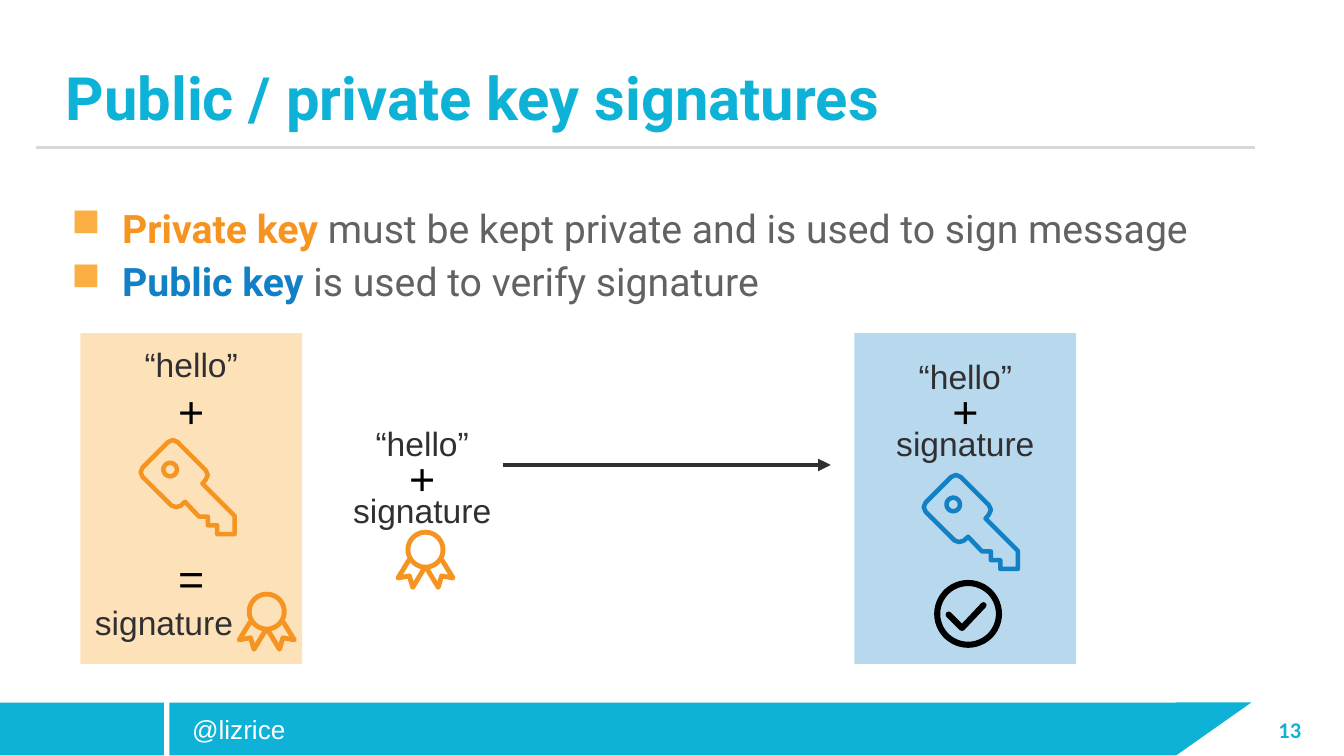
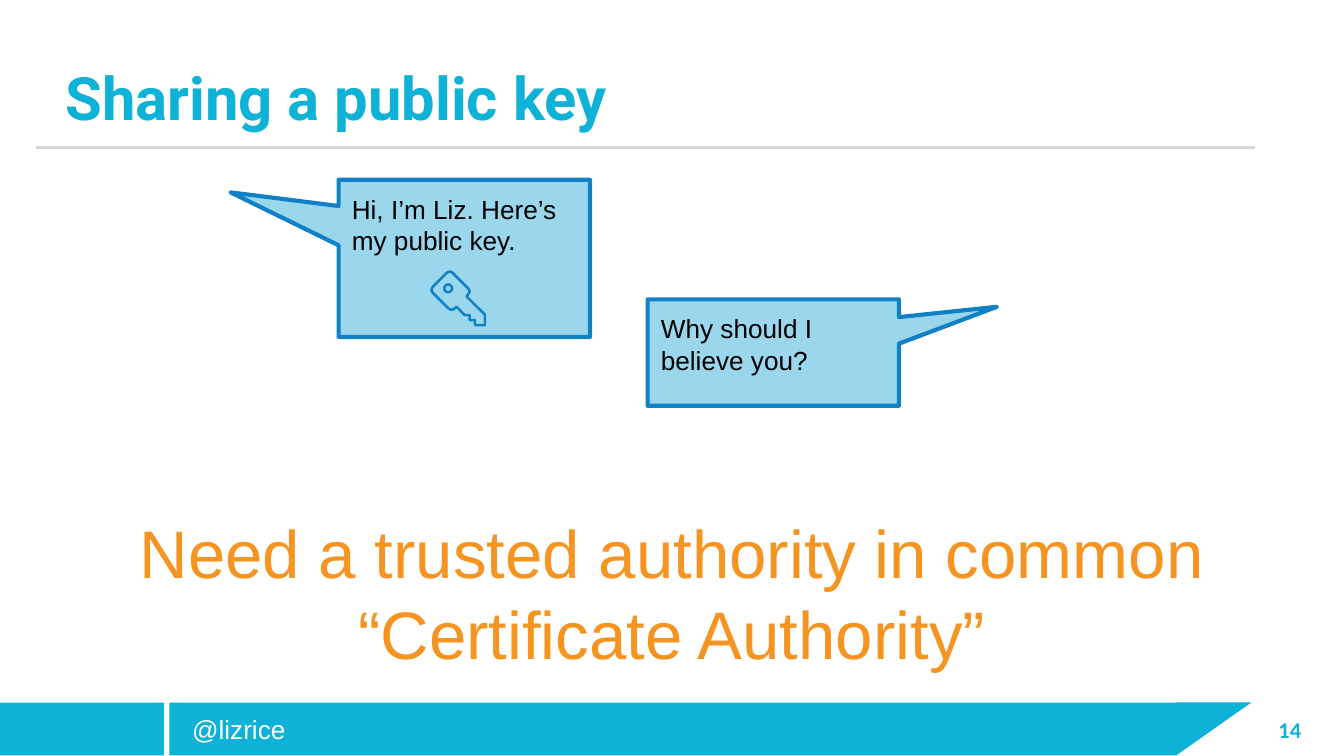
from math import cos, pi, sin

from lxml.etree import SubElement
from pptx import Presentation
from pptx.dml.color import RGBColor
from pptx.enum.shapes import MSO_CONNECTOR, MSO_SHAPE
from pptx.enum.text import MSO_ANCHOR, PP_ALIGN
from pptx.oxml.ns import qn
from pptx.util import Cm, Pt

CYAN = RGBColor(0x0E, 0xB2, 0xD6)
PALE = RGBColor(0x9A, 0xD7, 0xEC)
BLUE = RGBColor(0x11, 0x80, 0xC4)
ORANGE = RGBColor(0xF6, 0x94, 0x21)
AMBER = RGBColor(0xFB, 0xAF, 0x42)
GREY = RGBColor(0x64, 0x61, 0x64)
RULE = RGBColor(0xD8, 0xD8, 0xD8)
DARK = RGBColor(0x30, 0x2F, 0x31)
BLACK = RGBColor(0, 0, 0)
WHITE = RGBColor(0xFF, 0xFF, 0xFF)

ROW = 1
PANEL = (4.19, 6.25)
PAD = Cm(0.25)


def ring(x, y, radius, count=48):
    turns = [2 * pi * n / count for n in range(count)]
    return [(x + radius * cos(t), y + radius * sin(t)) for t in turns], True


def mirror(points, width):
    return [(width - x, y) for x, y in points]


RIBBON = [(100, 230), (20, 360), (105, 345), (130, 430), (215, 290)]
MEDAL = [ring(225, 150, 130), (RIBBON, False), (mirror(RIBBON, 450), False)]
CHECK = [ring(255, 250, 230), ([(110, 255), (210, 355), (370, 185)], False)]
KEY = [
    ([(715, 715), (585, 715), (585, 650), (515, 650), (515, 585), (450, 585),
      (345, 475), (315, 503), (280, 515), (245, 503), (30, 290), (15, 255),
      (30, 220), (220, 30), (255, 15), (290, 30), (500, 240), (515, 275),
      (500, 310), (475, 340), (715, 580)], True),
    ring(235, 235, 50),
]


def write(para, text, size, color, font="Arial", bold=False):
    run = para.add_run()
    run.text = text
    run.font.size = Pt(size)
    run.font.name = font
    run.font.bold = bold
    run.font.color.rgb = color


def set_frame(frame, anchor=MSO_ANCHOR.TOP):
    frame.word_wrap = True
    frame.vertical_anchor = anchor
    frame.margin_left = frame.margin_right = PAD
    frame.margin_top = frame.margin_bottom = PAD
    return frame


def add_box(slide, x, y, w, h, anchor=MSO_ANCHOR.TOP):
    box = slide.shapes.add_textbox(Cm(x), Cm(y), Cm(w), Cm(h))
    return set_frame(box.text_frame, anchor)


def add_label(slide, text, x, y, w, size=18, color=DARK, align=PP_ALIGN.CENTER):
    para = add_box(slide, x, y, w, ROW, MSO_ANCHOR.MIDDLE).paragraphs[0]
    para.alignment = align
    write(para, text, size, color)


def add_block(slide, kind, x, y, w, h, color, alpha=None):
    shape = slide.shapes.add_shape(kind, Cm(x), Cm(y), Cm(w), Cm(h))
    shape.shadow.inherit = False
    shape.fill.solid()
    shape.fill.fore_color.rgb = color
    shape.line.fill.background()
    if alpha:
        tint = shape._element.spPr.find(qn("a:solidFill"))[0]
        SubElement(tint, qn("a:alpha")).set("val", str(alpha * 1000))
    return shape


def add_line(slide, x, y, end, color, width, arrow=False):
    line = slide.shapes.add_connector(
        MSO_CONNECTOR.STRAIGHT, Cm(x), Cm(y), Cm(end), Cm(y))
    line.line.color.rgb = color
    line.line.width = Pt(width)
    if arrow:
        SubElement(line.line._get_or_add_ln(), qn("a:tailEnd")).set("type", "triangle")
    SubElement(line._element.spPr, qn("a:effectLst"))


def add_icon(slide, parts, x, y, color, width, zoom=1.0):
    (first, closed), *rest = parts
    pen = slide.shapes.build_freeform(*first[0], scale=Cm(2.54) * zoom / 1000)
    pen.add_line_segments(first[1:], close=closed)
    for points, closed in rest:
        pen.move_to(*points[0])
        pen.add_line_segments(points[1:], close=closed)
    icon = pen.convert_to_shape(Cm(x), Cm(y))
    icon.shadow.inherit = False
    icon.fill.background()
    icon.line.color.rgb = color
    icon.line.width = Pt(width * zoom)
    edge = icon.line._get_or_add_ln()
    edge.set("cap", "rnd")
    SubElement(edge, qn("a:round"))


def add_bullet(para, term, color, rest):
    props = para._p.get_or_add_pPr()
    props.set("marL", str(Cm(1.27)))
    props.set("indent", str(-Cm(0.96)))
    tint = SubElement(props, qn("a:buClr"))
    SubElement(tint, qn("a:srgbClr")).set("val", str(AMBER))
    SubElement(props, qn("a:buChar")).set("char", "■")
    para.line_spacing = 1.14
    write(para, term, 21, color, "Roboto", True)
    write(para, rest, 21, GREY, "Roboto")


def add_stack(slide, mid, top):
    width = 3.76
    left = mid - width / 2
    add_label(slide, "“hello”", left, top, width)
    add_label(slide, "+", left, top + 0.66, width, 24, BLACK)
    add_label(slide, "signature", left, top + 1.27, width)


def add_callout(slide, text, x, y, h, tip):
    shape = add_block(slide, MSO_SHAPE.ROUNDED_RECTANGULAR_CALLOUT,
                      x, y, 4.75, h, PALE)
    for n, value in enumerate((*tip, 0)):
        shape.adjustments[n] = value
    shape.line.color.rgb = BLUE
    shape.line.width = Pt(2.25)
    para = set_frame(shape.text_frame).paragraphs[0]
    para.alignment = PP_ALIGN.LEFT
    write(para, text, 14, BLACK)


def add_page(deck, title, number):
    slide = deck.slides.add_slide(deck.slide_layouts[5])
    base = 13.28
    add_block(slide, MSO_SHAPE.RECTANGLE, 3.2, base, 19.03, ROW, CYAN)
    add_block(slide, MSO_SHAPE.RECTANGLE, 0, base, 3.1, ROW, CYAN)
    wedge = add_block(slide, MSO_SHAPE.RIGHT_TRIANGLE, 22.23, base, 1.42, ROW, CYAN)
    wedge._element.spPr.find(qn("a:xfrm")).set("flipV", "1")
    frame = add_box(slide, 23.7, 13.41, 1.14, 0.76)
    frame.margin_top = frame.margin_bottom = Cm(0.13)
    frame.paragraphs[0].alignment = PP_ALIGN.RIGHT
    write(frame.paragraphs[0], str(number), 12, CYAN, "Calibri", True)
    add_line(slide, 0.69, 2.79, 23.72, RULE, 1.5)
    add_label(slide, "@lizrice", 3.38, base, 7.04, 14, WHITE, PP_ALIGN.LEFT)
    head = slide.shapes.title
    head.left, head.top, head.width, head.height = Cm(0.99), Cm(0.36), Cm(22.56), Cm(2.41)
    para = set_frame(head.text_frame, MSO_ANCHOR.BOTTOM).paragraphs[0]
    para.alignment = PP_ALIGN.LEFT
    para.line_spacing = 0.9
    write(para, title, 32, CYAN, "Roboto", True)
    return slide


def draw_signing(deck):
    slide = add_page(deck, "Public / private key signatures", 13)
    frame = add_box(slide, 0.79, 3.48, 24.18, 2.97)
    add_bullet(frame.paragraphs[0], "Private key", ORANGE,
               " must be kept private and is used to sign message")
    add_bullet(frame.add_paragraph(), "Public key", BLUE,
               " is used to verify signature")

    left, right, top = 1.52, 16.15, 6.3
    add_block(slide, MSO_SHAPE.RECTANGLE, left, top, *PANEL, AMBER, 37)
    add_label(slide, "“hello”", left, 6.38, PANEL[0])
    add_label(slide, "+", left, 7.26, PANEL[0], 24, BLACK)
    add_icon(slide, KEY, 2.62, 8.28, ORANGE, 2.4)
    add_label(slide, "=", left, 10.41, PANEL[0], 24, BLACK)
    add_label(slide, "signature", 1.22, 11.25, 3.76)
    add_icon(slide, MEDAL, 4.47, 11.18, ORANGE, 2.6)

    add_stack(slide, 7.98, 7.87)
    add_icon(slide, MEDAL, 7.47, 10.01, ORANGE, 2.6)
    add_line(slide, 9.5, 8.79, 15.7, DARK, 2.25, True)

    add_block(slide, MSO_SHAPE.RECTANGLE, right, top, *PANEL, BLUE, 30)
    add_stack(slide, right + PANEL[0] / 2, 6.6)
    add_icon(slide, KEY, 17.42, 8.94, BLUE, 2.4)
    add_icon(slide, CHECK, 17.65, 10.97, BLACK, 3.25)


def draw_sharing(deck):
    slide = add_page(deck, "Sharing a public key", 14)
    frame = add_box(slide, 0, 9.42, 25.4, 2.82)
    lines = ("Need a trusted authority in common", "“Certificate Authority”")
    for n, text in enumerate(lines):
        para = frame.add_paragraph() if n else frame.paragraphs[0]
        para.alignment = PP_ALIGN.CENTER
        write(para, text, 36, ORANGE)
    add_callout(slide, "Hi, I’m Liz. Here’s my public key.",
                6.4, 3.4, 2.97, (-0.93, -0.42))
    add_icon(slide, KEY, 8.13, 5.11, BLUE, 2.4, 0.57)
    add_callout(slide, "Why should I believe you?",
                12.24, 5.66, 2.01, (0.89, -0.43))


def main():
    deck = Presentation()
    deck.slide_width, deck.slide_height = Cm(25.4), Cm(14.29)
    draw_signing(deck)
    draw_sharing(deck)
    deck.save("out.pptx")


if __name__ == "__main__":
    main()
